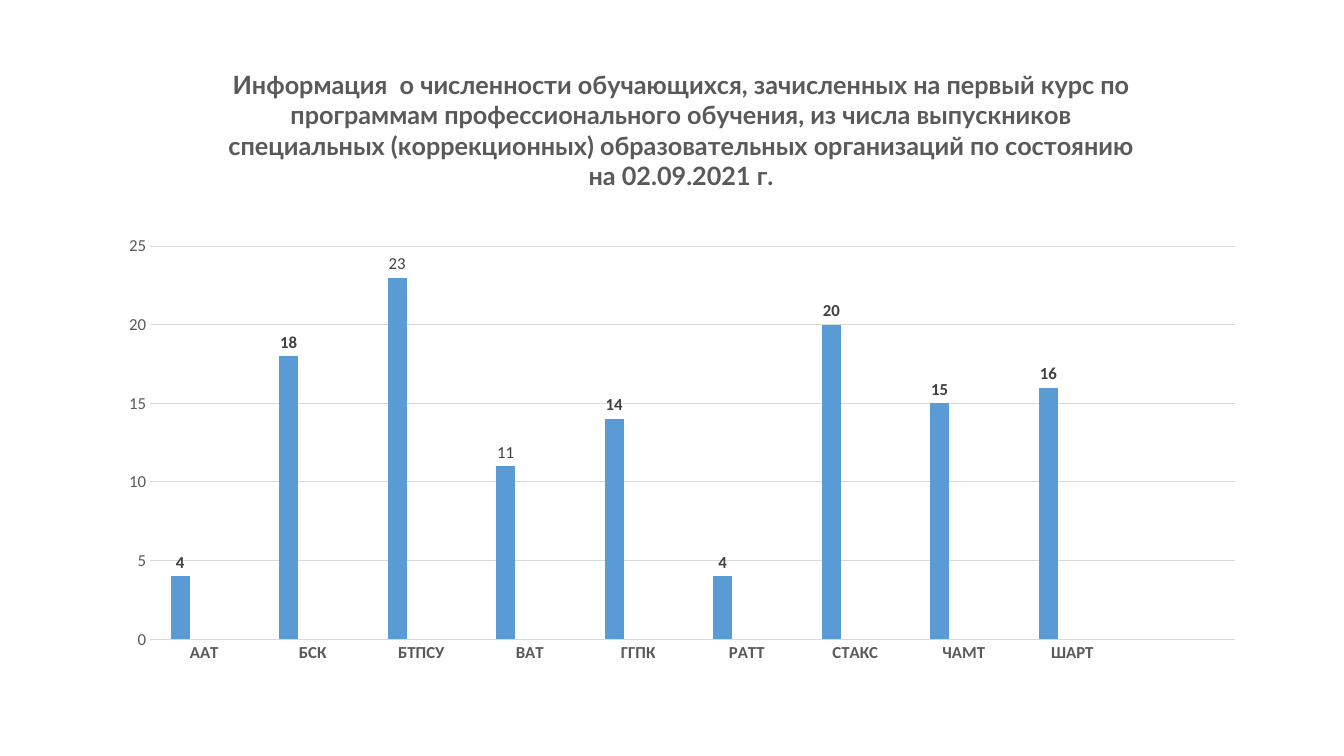
from dataclasses import dataclass

import pptx
import pptx.chart.data
import pptx.dml.color
import pptx.enum.chart
import pptx.oxml
import pptx.oxml.ns
import pptx.util
from pptx.util import Inches


@dataclass(frozen=True)
class Theme:
    font: str = "Calibri"
    title_font: str = "Lato"
    title_size: int = 18
    base_size: int = 10
    label_size: int = 12
    text: str = "595959"
    label_text: str = "404040"
    base_text: str = "000000"
    line: str = "D9D9D9"
    line_width: float = 0.75
    series: tuple = ("5B9BD5", "ED7D31", "A5A5A5")


THEME = Theme()
TITLE = (
    "Информация  о численности обучающихся, зачисленных на первый курс по "
    "программам профессионального обучения, из числа выпускников специальных "
    "(коррекционных) образовательных организаций по состоянию на 02.09.2021 г."
)
# The last category is an empty slot at the right edge.
COLLEGES = ["ААТ", "БСК", "БТПСУ", "ВАТ", "ГГПК", "РАТТ", "СТАКС", "ЧАМТ", "ШАРТ", ""]
STUDENTS = [4, 18, 23, 11, 14, 4, 20, 15, 16, None]
REGULAR_LABELS = (2, 3)
PLOT_AREA = {"x": 0.04, "y": 0.32, "w": 0.94, "h": 0.62}


def rgb(color):
    return pptx.dml.color.RGBColor.from_string(color)


def style_font(font, size, color, bold=False, name=THEME.font):
    font.name = name
    font.size = pptx.util.Pt(size)
    font.bold = bold
    font.color.rgb = rgb(color)


def style_line(line):
    line.color.rgb = rgb(THEME.line)
    line.width = pptx.util.Pt(THEME.line_width)


def add_student_chart(slide):
    data = pptx.chart.data.CategoryChartData()
    data.categories = COLLEGES
    data.add_series("Series 1", STUDENTS)
    for name in ("Series 2", "Series 3"):
        data.add_series(name, [None] * len(COLLEGES))
    chart = slide.shapes.add_chart(
        pptx.enum.chart.XL_CHART_TYPE.COLUMN_CLUSTERED,
        Inches(1.03), Inches(0.43), Inches(11.45), Inches(6.29), data,
    ).chart
    style_font(chart.font, THEME.base_size, THEME.base_text)
    chart.has_legend = False
    return chart


def set_title(chart):
    chart.has_title = True
    chart.chart_title.include_in_layout = False
    paragraph = chart.chart_title.text_frame.paragraphs[0]
    paragraph.text = TITLE
    style_font(paragraph.font, THEME.title_size, THEME.text, True, THEME.title_font)


def style_axes(chart):
    for axis, bold in ((chart.category_axis, True), (chart.value_axis, False)):
        axis.major_tick_mark = pptx.enum.chart.XL_TICK_MARK.NONE
        axis.minor_tick_mark = pptx.enum.chart.XL_TICK_MARK.NONE
        style_font(axis.tick_labels.font, THEME.label_size, THEME.text, bold)
    style_line(chart.category_axis.format.line)
    value_axis = chart.value_axis
    value_axis.minimum_scale = 0
    value_axis.maximum_scale = 25
    value_axis.major_unit = 5
    value_axis.format.line.fill.background()
    value_axis.has_major_gridlines = True
    style_line(value_axis.major_gridlines.format.line)


def style_columns(plot):
    plot.gap_width = 219
    plot.overlap = -27
    plot.vary_by_categories = False
    for series, color in zip(plot.series, THEME.series):
        series.format.fill.solid()
        series.format.fill.fore_color.rgb = rgb(color)


def label_columns(series):
    labels = series.data_labels
    labels.show_value = True
    points = [series.points[index].data_label for index in REGULAR_LABELS]
    for label in [labels] + points:
        style_font(label.font, THEME.label_size, THEME.label_text, label is labels)
        label.position = pptx.enum.chart.XL_LABEL_POSITION.OUTSIDE_END


def place_plot_area(chart):
    """Fix the inner plot area as fractions of the chart frame."""
    qn = pptx.oxml.ns.qn
    plot_area = chart.element.find(".//" + qn("c:plotArea"))
    for layout in plot_area.findall(qn("c:layout")):
        plot_area.remove(layout)
    modes = '<c:xMode val="edge"/><c:yMode val="edge"/>'
    sizes = "".join(f'<c:{key} val="{value}"/>' for key, value in PLOT_AREA.items())
    plot_area.insert(0, pptx.oxml.parse_xml(
        f'<c:layout {pptx.oxml.ns.nsdecls("c")}><c:manualLayout>'
        f'<c:layoutTarget val="inner"/>{modes}{sizes}</c:manualLayout></c:layout>'
    ))


def main():
    presentation = pptx.Presentation()
    presentation.slide_width = Inches(13.33)
    presentation.slide_height = Inches(7.5)
    slide = presentation.slides.add_slide(presentation.slide_layouts[6])
    chart = add_student_chart(slide)
    set_title(chart)
    style_axes(chart)
    style_columns(chart.plots[0])
    label_columns(chart.plots[0].series[0])
    place_plot_area(chart)
    presentation.save("out.pptx")


if __name__ == "__main__":
    main()
